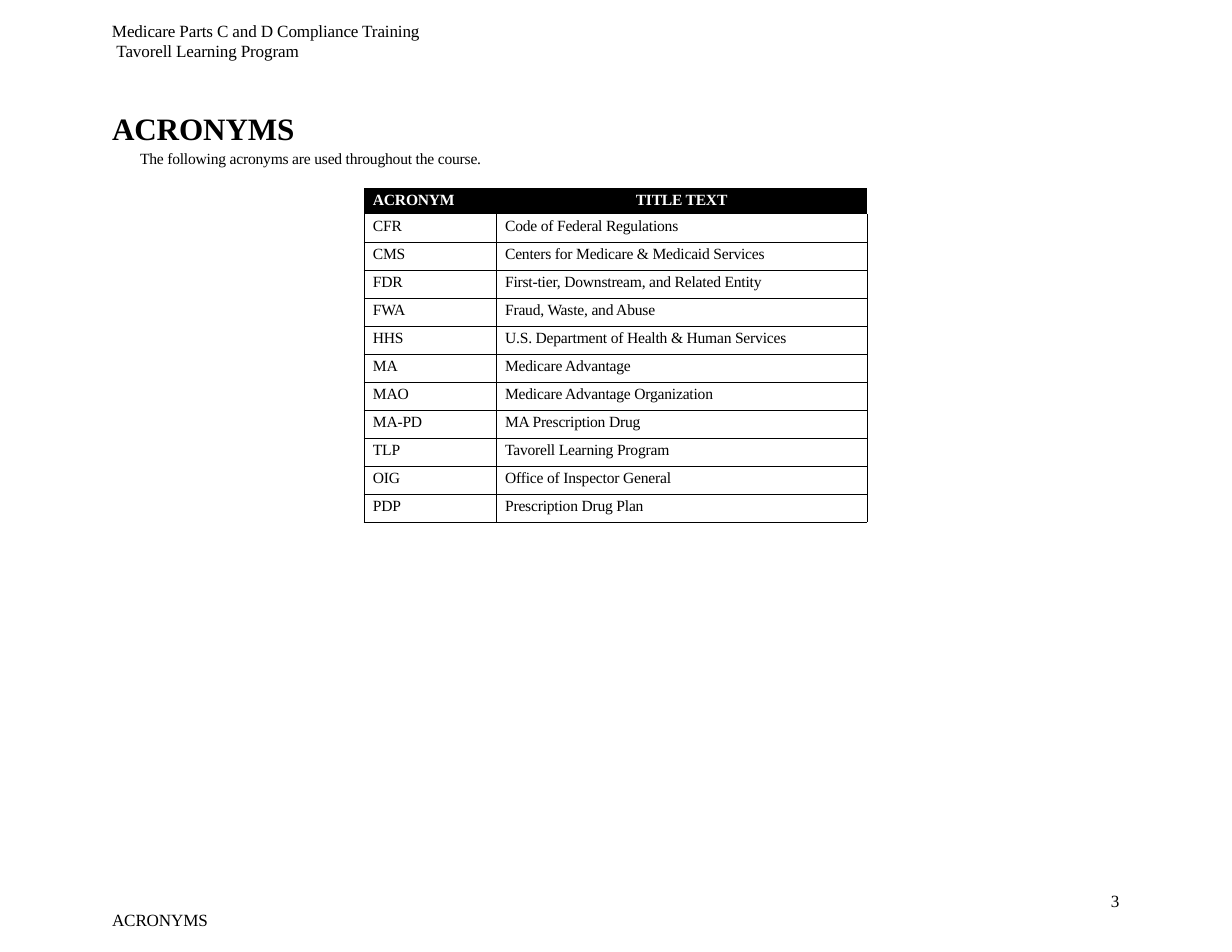
from lxml.etree import SubElement
from pptx import Presentation
from pptx.dml.color import RGBColor
from pptx.enum.text import MSO_ANCHOR as ANCHOR, MSO_AUTO_SIZE as FIT, PP_ALIGN as AL
from pptx.oxml.ns import qn
from pptx.util import Inches, Pt

ACRONYMS = [
    ("CFR", "Code of Federal Regulations"),
    ("CMS", "Centers for Medicare & Medicaid Services"),
    ("FDR", "First-tier, Downstream, and Related Entity"),
    ("FWA", "Fraud, Waste, and Abuse"),
    ("HHS", "U.S. Department of Health & Human Services"),
    ("MA", "Medicare Advantage"),
    ("MAO", "Medicare Advantage Organization"),
    ("MA-PD", "MA Prescription Drug"),
    ("TLP", "Tavorell Learning Program"),
    ("OIG", "Office of Inspector General"),
    ("PDP", "Prescription Drug Plan"),
]


def rgb(value):
    return RGBColor.from_string(value)


class Page:
    FONT = "Times New Roman"
    BLACK, WHITE = "000000", "FFFFFF"

    def __init__(self, prs):
        self.s = prs.slides.add_slide(prs.slide_layouts[5])

    def frame(self, tf, top):
        formats = {"margin_left": 0, "margin_right": 0, "margin_bottom": 0,
                   "margin_top": Inches(top), "word_wrap": True,
                   "auto_size": FIT.NONE, "vertical_anchor": ANCHOR.TOP}
        for name, value in formats.items():
            setattr(tf, name, value)

    def paragraph(self, p, text, size, indent=0.01, before=0, line=None,
                  bold=False, color=BLACK, align=AL.LEFT):
        formats = {"alignment": align, "space_before": Pt(before),
                   "line_spacing": Pt(line) if line else 1.0}
        for name, value in formats.items():
            setattr(p, name, value)
        pPr = p._p.get_or_add_pPr()
        pPr.set("marL", str(Inches(indent)))
        pPr.set("indent", "0")
        r = p.add_run()
        r.text = text
        for name, value in {"name": self.FONT, "size": Pt(size), "bold": bold}.items():
            setattr(r.font, name, value)
        r.font.color.rgb = rgb(color)
        r._r.get_or_add_rPr().set("spc", "-10")  # slightly tightened letters

    def text(self, box, lines, top=0):
        sp = self.s.shapes.add_textbox(*map(Inches, box))
        self.fill_text(sp.text_frame, lines, top)

    def title(self, box, lines, top):
        sp = self.s.shapes.title
        for name, value in zip(("left", "top", "width", "height"), box):
            setattr(sp, name, Inches(value))
        self.fill_text(sp.text_frame, lines, top)

    def fill_text(self, tf, lines, top):
        self.frame(tf, top)
        for i, line in enumerate(lines):
            p = tf.add_paragraph() if i else tf.paragraphs[0]
            self.paragraph(p, **line)

    def borders(self, cell, sides):
        tcPr = cell._tc.get_or_add_tcPr()
        for side in "LRTB":
            ln = SubElement(tcPr, qn(f"a:ln{side}"), w=str(Pt(0.5)))
            if side in sides:
                fill = SubElement(ln, qn("a:solidFill"))
                SubElement(fill, qn("a:srgbClr"), val=self.BLACK)
            else:
                SubElement(ln, qn("a:noFill"))

    def cell(self, cell, text, sides, fill=None, **style):
        for name, value in {"margin_left": 0, "margin_right": 0, "margin_bottom": 0,
                            "margin_top": Inches(0.03)}.items():
            setattr(cell, name, value)
        self.borders(cell, sides)
        if fill:
            cell.fill.solid()
            cell.fill.fore_color.rgb = rgb(fill)
        else:
            cell.fill.background()
        self.paragraph(cell.text_frame.paragraphs[0], text, 10, **style)

    def table(self, left, top, widths, header, rows, head_height, row_height):
        height = head_height + row_height * len(rows)
        table = self.s.shapes.add_table(
            len(rows) + 1, len(widths), Inches(left), Inches(top),
            Inches(sum(widths)), Inches(height)).table
        table.horz_banding = False
        for column, width in zip(table.columns, widths):
            column.width = Inches(width)
        for i, row in enumerate(table.rows):
            row.height = Inches(row_height if i else head_height)
        # Header row
        for j, (text, style) in enumerate(header):
            self.cell(table.cell(0, j), text, "", self.BLACK, before=1.9,
                      bold=True, color=self.WHITE, **style)
        # Body rows
        for i, row in enumerate(rows, 1):
            for j, text in enumerate(row):
                self.cell(table.cell(i, j), text, "LRB" if i == 1 else "LRTB",
                          indent=0.08, before=2.2)


def main():
    prs = Presentation()
    prs.slide_width, prs.slide_height = Inches(11), Inches(8.5)
    page = Page(prs)

    # Footer and running header
    page.text((9.91, 7.95, 0.1, 0.2), [dict(text="3", size=11, line=13.1)])
    page.text((0.99, 8.12, 0.89, 0.2), [dict(text="ACRONYMS", size=11, line=13.1)])
    page.text((0.99, 0.16, 2.84, 0.39), [
        dict(text="Medicare Parts C and D Compliance Training", size=11,
             before=1.9, line=12.7),
        dict(text="Tavorell Learning Program", size=11, indent=0.05, line=12.7),
    ], top=0.03)

    # Title with its introduction
    page.title((0.99, 0.93, 3.42, 0.59), [
        dict(text="ACRONYMS", size=20, before=3.8, bold=True),
        dict(text="The following acronyms are used throughout the course.",
             size=10, indent=0.26, before=1.4),
    ], top=0.05)

    # Acronym table
    header = [("ACRONYM", dict(indent=0.08)),
              ("TITLE TEXT", dict(indent=0, align=AL.CENTER))]
    page.table(3.25, 1.68, (1.18, 3.31), header, ACRONYMS, 0.23, 0.25)

    prs.save("out.pptx")


if __name__ == "__main__":
    main()
